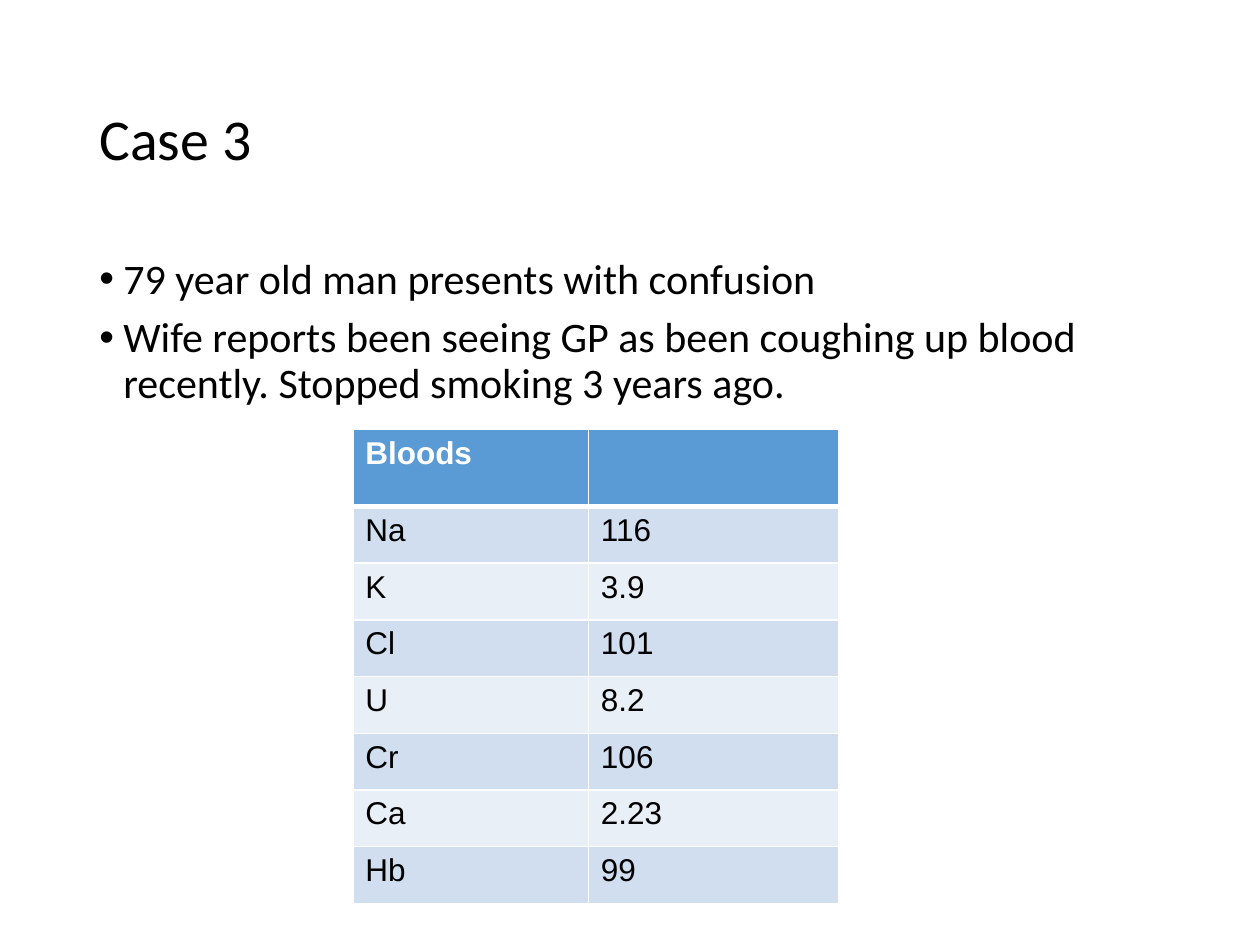
from dataclasses import dataclass

from lxml.etree import SubElement
from pptx import Presentation
from pptx.dml.color import RGBColor as RGB
from pptx.enum.text import MSO_ANCHOR as Anchor
from pptx.oxml import parse_xml
from pptx.oxml.ns import nsdecls, qn
from pptx.util import Inches, Pt


@dataclass(frozen=True)
class Theme:
    ink: str = "000000"
    paper: str = "FFFFFF"
    head: str = "5B9BD5"
    bands: tuple = ("D0DEEF", "E9EFF7")
    face: str = "Calibri"
    grid: str = "Arial"
    title: float = 33
    body: float = 24
    cell: float = 18


class Deck:
    def __init__(self, theme):
        self.theme = theme
        self.prs = Presentation()
        self.prs.slide_width = Inches(10)
        self.prs.slide_height = Inches(7.5)
        self.slide = self.prs.slides.add_slide(self.prs.slide_layouts[6])

    def style(self, para, face, size, color, bold=False):
        for run in para.runs:
            font = run.font
            font.name, font.size, font.bold = face, Pt(size), bold
            font.color.rgb = RGB.from_string(color)

    def text(self, box, lines, size, anchor=Anchor.TOP, bullet=False):
        shape = self.slide.shapes.add_textbox(*map(Inches, box))
        frame = shape.text_frame
        frame.word_wrap = True
        frame.vertical_anchor = anchor
        frame.text = "\n".join(lines)
        for i, para in enumerate(frame.paragraphs):
            para.line_spacing = 0.9
            if i:
                para.space_before = Pt(7.5)
            if bullet:
                self.bullet(para)
            self.style(para, self.theme.face, size, self.theme.ink)

    def bullet(self, para):
        props = para._p.get_or_add_pPr()
        props.set("marL", str(Inches(0.19)))
        props.set("indent", str(-Inches(0.19)))
        color = SubElement(props, qn("a:buClr"))
        SubElement(color, qn("a:srgbClr"), val=self.theme.ink)
        SubElement(props, qn("a:buFont"), typeface="Arial")
        SubElement(props, qn("a:buChar"), char="•")

    def border(self, cell, **widths):
        """Draw cell edges; they must precede the fill in the cell XML."""
        props = cell._tc.get_or_add_tcPr()
        for i, side in enumerate("LRTB"):
            props.insert(i, parse_xml(
                f'<a:ln{side} {nsdecls("a")} w="{Pt(widths.get(side, 1))}">'
                f'<a:solidFill><a:srgbClr val="{self.theme.paper}"/>'
                f'</a:solidFill></a:ln{side}>'))

    def table(self, left, top, cols, heights, rows):
        look = self.theme
        frame = self.slide.shapes.add_table(
            len(rows), len(cols), Inches(left), Inches(top),
            Inches(sum(cols)), Inches(sum(heights)))
        table = frame.table
        for col, width in zip(table.columns, cols):
            col.width = Inches(width)
        for r, (row, height, words) in enumerate(zip(table.rows, heights, rows)):
            row.height = Inches(height)
            head = r == 0
            fill = look.head if head else look.bands[(r - 1) % 2]
            edges = {0: {"B": 3}, 1: {"T": 3}}.get(r, {})
            for cell, word in zip(row.cells, words):
                cell.text = word
                cell.fill.solid()
                cell.fill.fore_color.rgb = RGB.from_string(fill)
                self.border(cell, **edges)
                self.style(cell.text_frame.paragraphs[0], look.grid, look.cell,
                           look.paper if head else look.ink, head)


def main():
    theme = Theme()
    deck = Deck(theme)
    deck.text((0.69, 0.4, 8.62, 1.45), ["Case 3"], theme.title, Anchor.MIDDLE)
    deck.text((0.69, 2, 8.62, 4.76), [
        "79 year old man presents with confusion",
        "Wife reports been seeing GP as been coughing up blood recently. "
        "Stopped smoking 3 years ago.",
    ], theme.body, bullet=True)
    bloods = [
        ("Bloods", ""),
        ("Na", "116"),
        ("K", "3.9"),
        ("Cl", "101"),
        ("U", "8.2"),
        ("Cr", "106"),
        ("Ca", "2.23"),
        ("Hb", "99"),
    ]
    heights = [0.61] + [0.45] * (len(bloods) - 1)
    deck.table(2.8, 3.41, (1.87, 1.99), heights, bloods)
    deck.prs.save("out.pptx")


if __name__ == "__main__":
    main()
